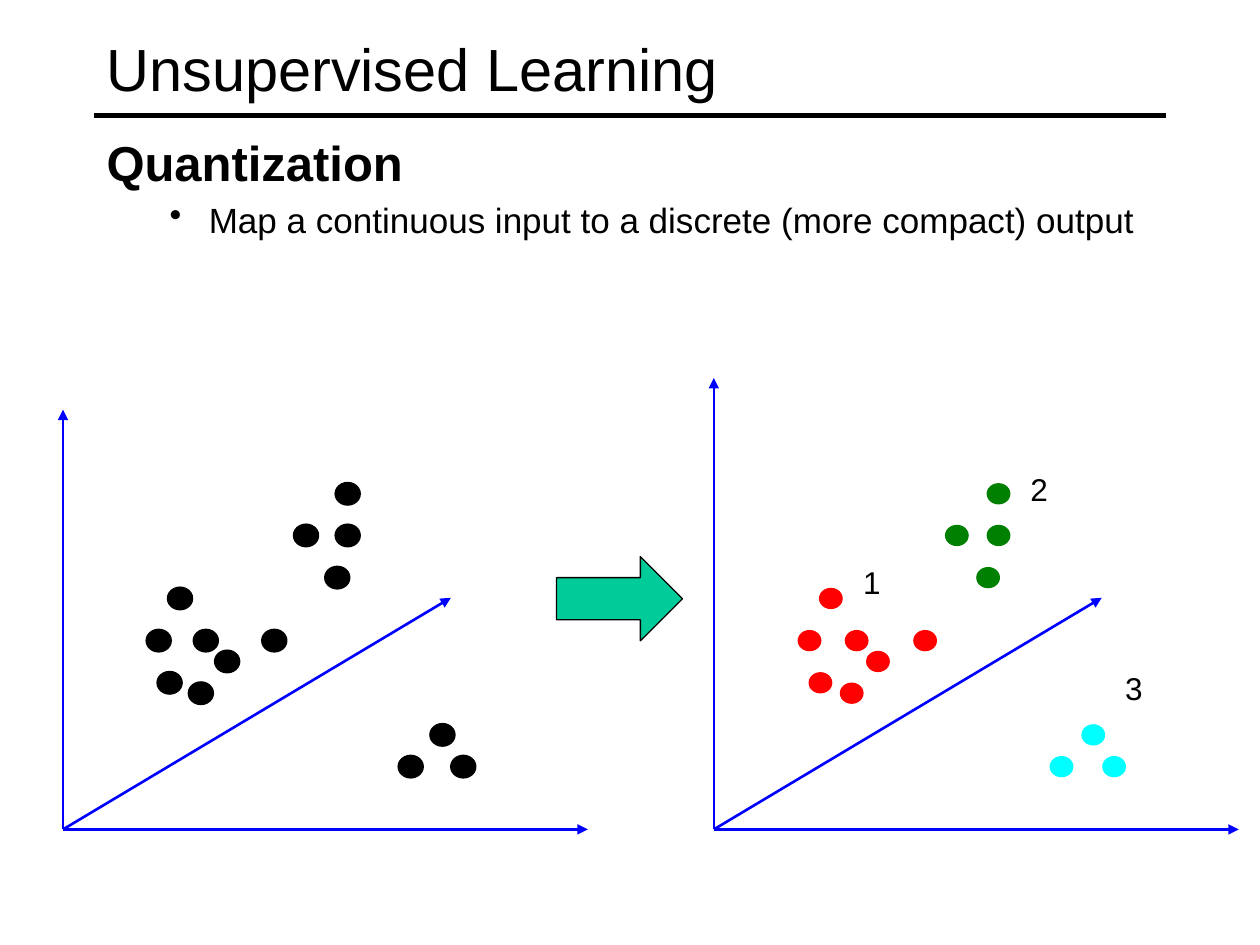
from dataclasses import dataclass

from lxml import etree
from pptx import Presentation
from pptx import util as u
from pptx.dml.color import RGBColor
from pptx.enum import shapes, text
from pptx.oxml import ns


@dataclass(frozen=True)
class Theme:
    font: str = "Arial"
    ink: str = "000000"
    axis: str = "0000FF"
    arrow: str = "00CC99"
    clusters: tuple = ("FF0000", "008000", "00FFFF")
    title_size: float = 34
    heading_size: float = 28
    bullet_size: float = 20
    label_size: float = 18
    rule_width: float = 3
    line_width: float = 1.5
    thin_width: float = 0.75


def apply(target, values):
    for name, value in values.items():
        setattr(target, name, value)


class Board:
    def __init__(self, slide, theme):
        self.slide = slide
        self.theme = theme

    def line(self, start, end, color, width, arrow=False):
        ends = [u.Cm(v) for v in (*start, *end)]
        connector = self.slide.shapes.add_connector(
            shapes.MSO_CONNECTOR.STRAIGHT, *ends)
        connector.line.color.rgb = RGBColor.from_string(color)
        connector.line.width = u.Pt(width)
        props = connector._element.spPr
        if arrow:
            etree.SubElement(props.find(ns.qn("a:ln")),
                             ns.qn("a:tailEnd"), type="triangle")
        etree.SubElement(props, ns.qn("a:effectLst"))

    def shape(self, kind, box, fill, outline=None, width=0):
        figure = self.slide.shapes.add_shape(kind, *[u.Cm(v) for v in box])
        figure.shadow.inherit = False
        figure.fill.solid()
        figure.fill.fore_color.rgb = RGBColor.from_string(fill)
        if outline:
            figure.line.color.rgb = RGBColor.from_string(outline)
            figure.line.width = u.Pt(width)
        else:
            figure.line.fill.background()

    def text_box(self, box, anchor=text.MSO_ANCHOR.TOP):
        frame = self.slide.shapes.add_textbox(
            *[u.Cm(v) for v in box]).text_frame
        apply(frame, {"word_wrap": True, "vertical_anchor": anchor})
        return frame

    def wording(self, paragraph, words, size, bold=False, before=0):
        paragraph.space_before = u.Pt(before)
        run = paragraph.add_run()
        run.text = words
        apply(run.font, {"name": self.theme.font, "size": u.Pt(size),
                         "bold": bold})
        run.font.color.rgb = RGBColor.from_string(self.theme.ink)

    def indent(self, paragraph, margin, hanging, bullet=None):
        props = paragraph._p.get_or_add_pPr()
        props.set("marL", str(u.Cm(margin)))
        props.set("indent", str(-u.Cm(hanging)))
        if bullet:
            etree.SubElement(props, ns.qn("a:buChar"), char=bullet)

    def axes(self, origin, height):
        x, y = origin
        for end in ((x, y - height), (x + 10.58, y), (x + 7.82, y - 4.67)):
            self.line(origin, end, self.theme.axis, self.theme.line_width,
                      arrow=True)

    def dots(self, places, shift, fill, outline=None):
        for x, y in places:
            self.shape(shapes.MSO_SHAPE.OVAL, (x + shift, y, 0.48, 0.43),
                       fill, outline, self.theme.line_width)


CLUSTERS = (
    ((3.91, 12.7), (4.34, 13.12), (2.96, 12.7), (3.81, 13.76),
     (3.18, 13.55), (5.29, 12.7), (3.39, 11.85)),
    ((6.77, 9.74), (6.56, 11.43), (5.93, 10.58), (6.77, 10.58)),
    ((9.1, 15.24), (8.68, 14.6), (8.04, 15.24)),
)
LABEL_PLACES = ((17.15, 11.23), (20.52, 9.35), (22.43, 13.36))
ORIGIN = (1.27, 16.72)
SHIFT = 13.12


def main():
    deck = Presentation()
    apply(deck, {"slide_width": u.Cm(25.4), "slide_height": u.Cm(19.05)})
    theme = Theme()
    board = Board(deck.slides.add_slide(deck.slide_layouts[6]), theme)

    board.line((1.9, 2.33), (23.5, 2.33), theme.ink, theme.rule_width)
    title = board.text_box((1.9, 0.21, 21.6, 2.33), text.MSO_ANCHOR.MIDDLE)
    board.wording(title.paragraphs[0], "Unsupervised Learning",
                  theme.title_size)

    body = board.text_box((1.9, 2.54, 21.6, 14.6))
    heading = body.paragraphs[0]
    board.wording(heading, "Quantization", theme.heading_size, True, 5.6)
    board.indent(heading, 0.95, 0.95)
    point = body.add_paragraph()
    board.wording(point,
                  "Map a continuous input to a discrete (more compact) output",
                  theme.bullet_size, before=4)
    point.level = 1
    board.indent(point, 2.06, 0.79, "•")

    board.axes(ORIGIN, 8.46)
    for cluster in CLUSTERS:
        board.dots(cluster, 0, theme.ink, theme.ink)

    board.shape(shapes.MSO_SHAPE.RIGHT_ARROW, (11.22, 11.22, 2.54, 1.7),
                theme.arrow, theme.ink, theme.thin_width)

    board.axes((ORIGIN[0] + SHIFT, ORIGIN[1]), 9.1)
    groups = zip(CLUSTERS, theme.clusters, LABEL_PLACES)
    for number, (cluster, color, place) in enumerate(groups, 1):
        board.dots(cluster, SHIFT, color)
        label = board.text_box((*place, 1.07, 1.45))
        board.wording(label.paragraphs[0], str(number), theme.label_size)

    deck.save("out.pptx")


if __name__ == "__main__":
    main()
